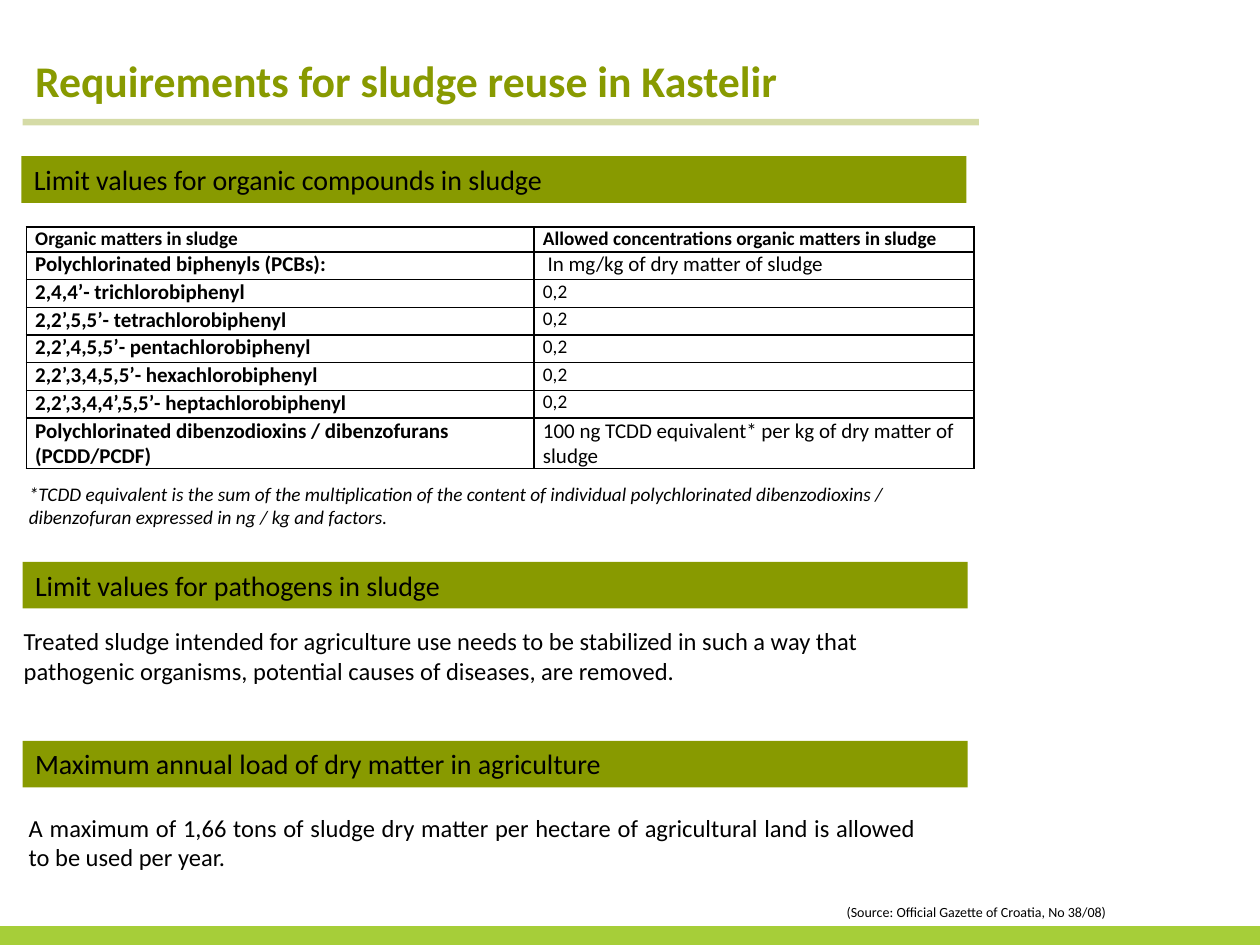
from dataclasses import dataclass

from lxml.etree import SubElement
from pptx import Presentation
from pptx.dml.color import RGBColor
from pptx.enum.shapes import MSO_CONNECTOR, MSO_SHAPE
from pptx.enum.text import MSO_ANCHOR, PP_ALIGN
from pptx.oxml.ns import qn
from pptx.util import Inches, Pt


@dataclass(frozen=True)
class Theme:
    font: str = "Calibri"
    ink: str = "000000"
    olive: str = "889A00"
    footer: str = "A6CE39"
    title: int = 25
    heading: int = 16
    body: int = 14
    cell: int = 12
    small: int = 11
    source: int = 8


THEME = Theme()

TITLE = "Requirements for sludge reuse in Kastelir"
HEADINGS = [
    ("Limit values for organic compounds in sludge", 0.17, 1.24),
    ("Limit values for pathogens in sludge", 0.18, 4.46),
    ("Maximum annual load of dry matter in agriculture", 0.18, 5.88),
]
PASSAGES = [
    ("*TCDD equivalent is the sum of the multiplication of the content of individual "
     "polychlorinated dibenzodioxins / dibenzofuran expressed in ng / kg and factors.",
     (0.13, 3.78, 7.71, 0.47), {"size": THEME.small, "italic": True}),
    ("Treated sludge intended for agriculture use needs to be stabilized in such a way "
     "that pathogenic organisms, potential causes of diseases, are removed.",
     (0.09, 4.92, 7.56, 0.57), {}),
    ("A maximum of 1,66 tons of sludge dry matter per hectare of agricultural land is "
     "allowed to be used per year.",
     (0.13, 6.4, 7.24, 0.57), {"align": PP_ALIGN.JUSTIFY}),
    ("(Source: Official Gazette of Croatia, No 38/08)",
     (6.62, 7.12, 3.18, 0.24), {"size": THEME.source}),
]
LIMITS = [
    ("Organic matters in sludge", "Allowed concentrations organic matters in sludge"),
    ("Polychlorinated biphenyls (PCBs):", " In mg/kg of dry matter of sludge"),
    ("2,4,4’- trichlorobiphenyl", "0,2"),
    ("2,2’,5,5’- tetrachlorobiphenyl", "0,2"),
    ("2,2’,4,5,5’- pentachlorobiphenyl", "0,2"),
    ("2,2’,3,4,5,5’- hexachlorobiphenyl", "0,2"),
    ("2,2’,3,4,4’,5,5’- heptachlorobiphenyl", "0,2"),
    ("Polychlorinated dibenzodioxins / dibenzofurans (PCDD/PCDF)",
     "100 ng TCDD equivalent* per kg of dry matter of sludge"),
]
COLUMN_WIDTHS = [4.03, 3.49]
ROW_HEIGHTS = [0.2] + [0.22] * 6 + [0.3]


def write(frame, text, size=THEME.body, color=THEME.ink, bold=False, italic=False,
          align=PP_ALIGN.LEFT, spacing=None):
    frame.word_wrap = True
    paragraph = frame.paragraphs[0]
    paragraph.alignment = align
    if spacing:
        paragraph.line_spacing = Pt(spacing)
    run = paragraph.add_run()
    run.text = text
    run.font.name = THEME.font
    run.font.size = Pt(size)
    run.font.color.rgb = RGBColor.from_string(color)
    run.font.bold = bold
    run.font.italic = italic


def add_text(slide, text, place, **style):
    box = slide.shapes.add_textbox(*map(Inches, place))
    write(box.text_frame, text, **style)


def add_bar(slide, place, color):
    bar = slide.shapes.add_shape(MSO_SHAPE.RECTANGLE, *map(Inches, place))
    bar.shadow.inherit = False
    bar.fill.solid()
    bar.fill.fore_color.rgb = RGBColor.from_string(color)
    bar.line.fill.background()
    return bar


def add_rule(slide):
    rule = slide.shapes.add_connector(
        MSO_CONNECTOR.STRAIGHT, *map(Inches, (0.18, 0.97, 7.77, 0.97)))
    rule.line.width = Pt(3.75)
    rule.line.color.rgb = RGBColor.from_string(THEME.olive)
    properties = rule._element.spPr
    color = next(properties.iter(qn("a:srgbClr")))
    SubElement(color, qn("a:alpha"), val="35000")
    SubElement(properties, qn("a:effectLst"))


def add_borders(cell):
    properties = cell._tc.get_or_add_tcPr()
    for position, side in enumerate(("a:lnL", "a:lnR", "a:lnT", "a:lnB")):
        border = properties.makeelement(qn(side), {"w": str(Pt(1))})
        properties.insert(position, border)
        fill = SubElement(border, qn("a:solidFill"))
        SubElement(fill, qn("a:srgbClr"), val=THEME.ink)


def add_limits(slide):
    table = slide.shapes.add_table(
        len(LIMITS), len(COLUMN_WIDTHS), Inches(0.21), Inches(1.8),
        Inches(sum(COLUMN_WIDTHS)), Inches(sum(ROW_HEIGHTS))).table
    table.first_row = table.horz_banding = False
    for column, width in zip(table.columns, COLUMN_WIDTHS):
        column.width = Inches(width)
    for row_index, (row, height) in enumerate(zip(table.rows, ROW_HEIGHTS)):
        row.height = Inches(height)
        for column_index, text in enumerate(LIMITS[row_index]):
            cell = table.cell(row_index, column_index)
            cell.margin_left = cell.margin_right = Inches(0.07)
            cell.margin_top = cell.margin_bottom = 0
            cell.vertical_anchor = MSO_ANCHOR.TOP
            cell.fill.background()
            add_borders(cell)
            is_small = row_index == 0 or text == "0,2"
            write(cell.text_frame, text, size=THEME.small if is_small else THEME.cell,
                  bold=row_index == 0 or column_index == 0)


def main():
    deck = Presentation()
    deck.slide_width, deck.slide_height = Inches(10), Inches(7.5)
    slide = deck.slides.add_slide(deck.slide_layouts[6])

    add_bar(slide, (0, 7.35, 10, 0.15), THEME.footer)
    add_rule(slide)
    add_text(slide, TITLE, (0.18, 0.61, 8.09, 0.28), size=THEME.title,
             color=THEME.olive, bold=True, spacing=13)
    for heading, left, top in HEADINGS:
        bar = add_bar(slide, (left, top, 7.5, 0.37), THEME.olive)
        bar.text_frame.vertical_anchor = MSO_ANCHOR.TOP
        write(bar.text_frame, heading, size=THEME.heading)
    for passage, place, style in PASSAGES:
        add_text(slide, passage, place, **style)
    add_limits(slide)

    deck.save("out.pptx")


if __name__ == "__main__":
    main()
